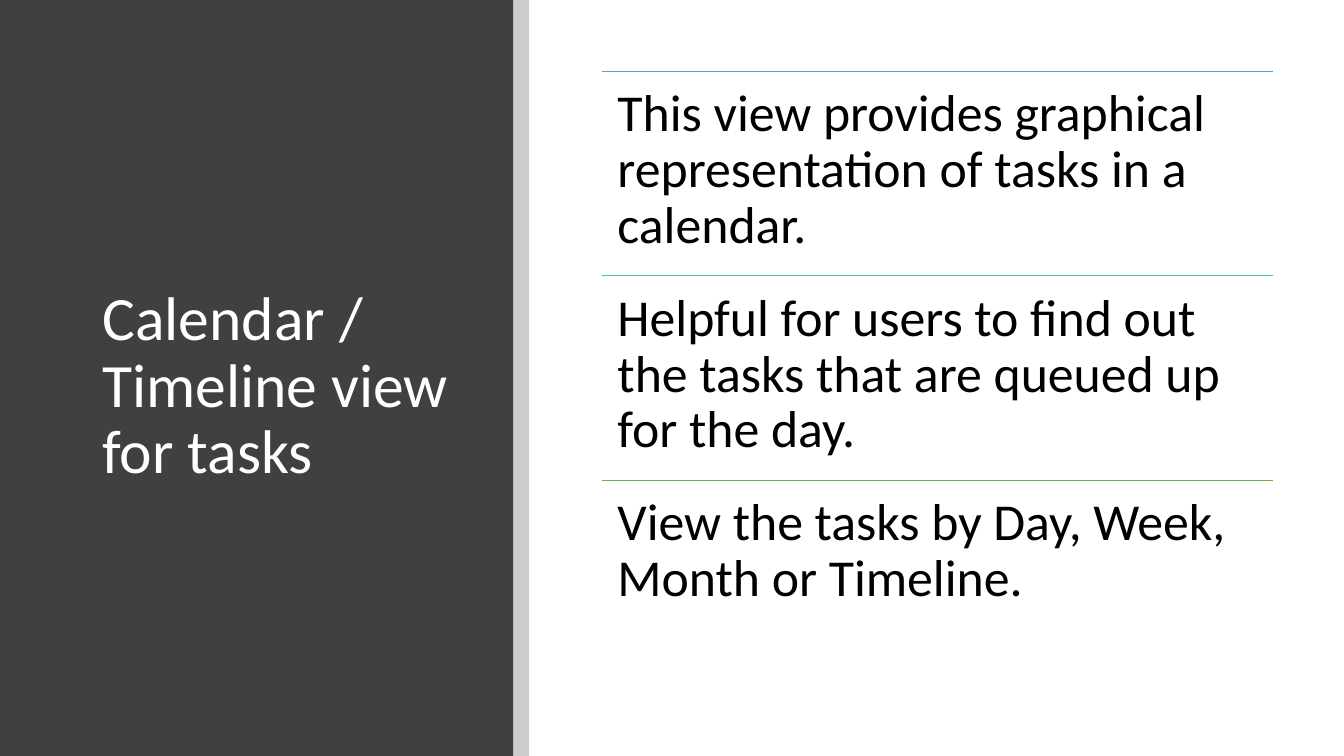
"""Build a slide with a dark title panel and a ruled list of points."""
from collections import namedtuple
from dataclasses import dataclass

from lxml import etree
from pptx import Presentation, util as u
from pptx.dml.color import RGBColor
from pptx.enum import shapes, text
from pptx.oxml.ns import qn

Box = namedtuple("Box", "left top width height")


@dataclass(frozen=True)
class Theme:
    """Colours, font and sizes used on the slide."""

    panel: str = "404040"
    strip: str = "000000"
    strip_opacity: int = 20
    title: str = "FFFFFF"
    body: str = "000000"
    font: str = "Calibri"
    title_size: float = 44
    body_size: float = 37
    line_spacing: float = 0.9
    rule_width: float = 0.5


THEME = Theme()
TITLE = "Calendar / Timeline view for tasks"
POINTS = [
    ("This view provides graphical representation of tasks in a calendar.", "5B9BD5"),
    ("Helpful for users to find out the tasks that are queued up for the day.", "4DC58D"),
    ("View the tasks by Day, Week, Month or Timeline.", "70AD47"),
]


def points(*lengths):
    """Turn numbers into point lengths."""
    return [u.Pt(length) for length in lengths]


def write(frame, words, size, colour, anchor, inset):
    """Write one left-aligned paragraph into a text frame."""
    frame.word_wrap = True
    frame.auto_size = text.MSO_AUTO_SIZE.NONE
    frame.vertical_anchor = anchor
    frame.margin_left = frame.margin_right = u.Pt(inset)
    frame.margin_top = frame.margin_bottom = u.Pt(inset)
    para = frame.paragraphs[0]
    para.alignment = text.PP_ALIGN.LEFT
    para.line_spacing = THEME.line_spacing
    span = para.add_run()
    span.text = words
    span.font.name = THEME.font
    span.font.size = u.Pt(size)
    span.font.color.rgb = RGBColor.from_string(colour)


def add_block(slide, box, colour):
    """Add a plain filled rectangle."""
    block = slide.shapes.add_shape(shapes.MSO_SHAPE.RECTANGLE, *points(*box))
    block.shadow.inherit = False
    block.fill.solid()
    block.fill.fore_color.rgb = RGBColor.from_string(colour)
    block.line.fill.background()
    return block


def add_title_panel(slide, box):
    """Place the dark panel, its translucent edge strip and the title."""
    strip_width = 11.5
    panel_width = box.width - strip_width
    add_block(slide, box._replace(width=panel_width), THEME.panel)
    strip_box = box._replace(left=box.left + panel_width, width=strip_width)
    strip = add_block(slide, strip_box, THEME.strip)
    colour = strip.fill._xPr.find(qn("a:solidFill"))[0]
    etree.SubElement(colour, qn("a:alpha"), val=str(THEME.strip_opacity * 1000))

    title = slide.shapes.title
    title.left, title.top, title.width, title.height = points(
        box.left + 66, box.top + 64, panel_width - 103.5, box.height - 114.5)
    write(title.text_frame, TITLE, THEME.title_size, THEME.title,
          text.MSO_ANCHOR.MIDDLE, 7.2)
    slide.shapes._spTree.append(title._element)


def add_rule(slide, left, top, width, colour):
    """Draw a thin horizontal line."""
    rule = slide.shapes.add_connector(
        shapes.MSO_CONNECTOR.STRAIGHT, *points(left, top, left + width, top))
    rule.line.color.rgb = RGBColor.from_string(colour)
    rule.line.width = u.Pt(THEME.rule_width)
    etree.SubElement(rule._element.spPr, qn("a:effectLst"))


def add_point_list(slide, box):
    """Stack the points in equal rows, each below its own rule."""
    row_height = box.height / len(POINTS)
    for index, (words, colour) in enumerate(POINTS):
        row = box._replace(top=box.top + index * row_height, height=row_height)
        add_rule(slide, row.left, row.top, row.width, colour)
        label = slide.shapes.add_textbox(*points(*row))
        write(label.text_frame, words, THEME.body_size, THEME.body,
              text.MSO_ANCHOR.TOP, 11.1)


def main():
    """Build and save the deck."""
    deck = Presentation()
    deck.slide_width, deck.slide_height = points(960, 540)
    slide = deck.slides.add_slide(deck.slide_layouts.get_by_name("Title Only"))
    add_title_panel(slide, Box(0, 0, 378, 540))
    add_point_list(slide, Box(430, 51, 479.5, 438))
    deck.save("out.pptx")


if __name__ == "__main__":
    main()
